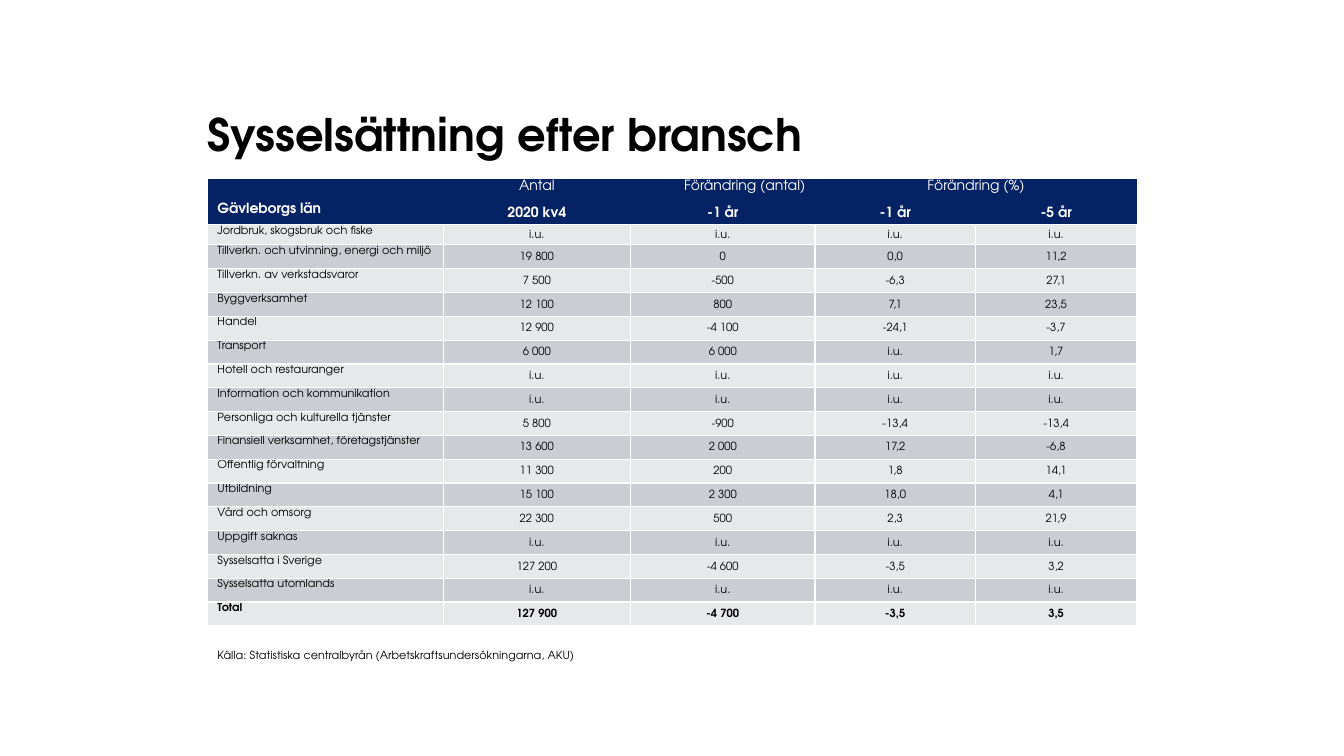
"""Build a slide with a table of employment by industry."""
from dataclasses import dataclass

from lxml import etree
from pptx import Presentation
from pptx.dml.color import RGBColor
from pptx.enum import text as tx
from pptx.oxml import ns
from pptx.util import Cm, Pt

FONT = "TeX Gyre Adventor"
HUES = {"navy": "052364", "light": "E7E8EA", "dark": "CCCDD3",
        "white": "FFFFFF", "black": "000000"}
LEFT, WIDTH = 5.23, 23.42
COLS = [5.94, 4.72, 4.65, 4.04, 4.07]
MID = tx.PP_ALIGN.CENTER


@dataclass
class Style:
    """Look of a piece of text."""
    size: float
    hue: str = "black"
    bold: bool = False


@dataclass
class Row:
    """One table row with its look."""
    cells: list[str]
    fill: str
    style: Style
    high: float
    head: bool = False


DATA = [
    ["Jordbruk, skogsbruk och fiske", "i.u.", "i.u.", "i.u.", "i.u."],
    ["Tillverkn. och utvinning, energi och miljö", "19 800", "0", "0,0", "11,2"],
    ["Tillverkn. av verkstadsvaror", "7 500", "-500", "-6,3", "27,1"],
    ["Byggverksamhet", "12 100", "800", "7,1", "23,5"],
    ["Handel", "12 900", "-4 100", "-24,1", "-3,7"],
    ["Transport", "6 000", "6 000", "i.u.", "1,7"],
    ["Hotell och restauranger", "i.u.", "i.u.", "i.u.", "i.u."],
    ["Information och kommunikation", "i.u.", "i.u.", "i.u.", "i.u."],
    ["Personliga och kulturella tjänster", "5 800", "-900", "-13,4", "-13,4"],
    ["Finansiell verksamhet, företagstjänster", "13 600", "2 000", "17,2", "-6,8"],
    ["Offentlig förvaltning", "11 300", "200", "1,8", "14,1"],
    ["Utbildning", "15 100", "2 300", "18,0", "4,1"],
    ["Vård och omsorg", "22 300", "500", "2,3", "21,9"],
    ["Uppgift saknas", "i.u.", "i.u.", "i.u.", "i.u."],
    ["Sysselsatta i Sverige", "127 200", "-4 600", "-3,5", "3,2"],
    ["Sysselsatta utomlands", "i.u.", "i.u.", "i.u.", "i.u."],
    ["Total", "127 900", "-4 700", "-3,5", "3,5"],
]


def make_rows() -> list[Row]:
    """Join the header rows and the banded data rows."""
    rows = [
        Row(["", "Antal", "Förändring (antal)", "Förändring (%)", ""],
            "navy", Style(10, "white"), 0.58, True),
        Row(["Gävleborgs län", "2020 kv4", "-1 år", "-1 år", "-5 år"],
            "navy", Style(10, "white", True), 0.58, True),
    ]
    for i, cells in enumerate(DATA):
        style = Style(8, bold=cells[0] == "Total")
        fill = "dark" if i % 2 else "light"
        rows.append(Row(cells, fill, style, 0.6 if i else 0.51))
    return rows


def write(frame, words: str, style: Style, align=tx.PP_ALIGN.LEFT) -> None:
    """Put styled words into a text frame."""
    frame.text = words
    para = frame.paragraphs[0]
    para.alignment = align
    for run in para.runs:
        run.font.name = FONT
        run.font.size = Pt(style.size)
        run.font.bold = style.bold
        run.font.color.rgb = RGBColor.from_string(HUES[style.hue])
    if not words:
        end = etree.SubElement(para._p, ns.qn("a:endParaRPr"))
        end.set("sz", str(int(style.size * 100)))


def edge(cell, sides: str, hue: str | None) -> None:
    """Draw or clear the border on the given sides."""
    props = cell._tc.get_or_add_tcPr()
    for side in sides:
        line = etree.SubElement(props, ns.qn(f"a:ln{side}"), w=str(Pt(1)))
        if hue:
            fill = etree.SubElement(line, ns.qn("a:solidFill"))
            etree.SubElement(fill, ns.qn("a:srgbClr"), val=HUES[hue])
        else:
            etree.SubElement(line, ns.qn("a:noFill"))


def pad(cell, first: bool) -> None:
    """Set the cell margins."""
    cell.margin_left = cell.margin_right = Cm(0.25 if first else 0.03)
    cell.margin_top = Cm(0.03)
    cell.margin_bottom = 0


def add_grid(slide) -> None:
    """Add the table of industries."""
    rows = make_rows()
    high = sum(row.high for row in rows)
    grid = slide.shapes.add_table(len(rows), len(COLS), Cm(LEFT), Cm(4.5),
                                  Cm(WIDTH), Cm(high)).table
    grid.first_row = grid.horz_banding = False
    for col, wide in zip(grid.columns, COLS):
        col.width = Cm(wide)
    for r, row in enumerate(rows):
        grid.rows[r].height = Cm(row.high)
        for c, words in enumerate(row.cells):
            cell = grid.cell(r, c)
            write(cell.text_frame, words, row.style,
                  MID if c else tx.PP_ALIGN.LEFT)
            pad(cell, c == 0)
            if c and r:
                cell.vertical_anchor = tx.MSO_ANCHOR.MIDDLE
            if row.head:
                edge(cell, "LRTB", None)
            else:
                edge(cell, "LRB" if r == 2 else "LRTB", "white")
            cell.fill.solid()
            cell.fill.fore_color.rgb = RGBColor.from_string(HUES[row.fill])
    grid.cell(0, 3).merge(grid.cell(0, 4))
    last = grid.cell(0, 2)
    last.margin_right = Cm(0.25)
    last.text_frame.paragraphs[0].alignment = tx.PP_ALIGN.RIGHT


def main() -> None:
    """Build and save the slide."""
    deck = Presentation()
    deck.slide_width, deck.slide_height = Cm(33.87), Cm(19.05)
    slide = deck.slides.add_slide(deck.slide_layouts[5])

    title = slide.shapes.title
    title.left, title.top = Cm(LEFT), Cm(0.94)
    title.width, title.height = Cm(WIDTH), Cm(3.1)
    frame = title.text_frame
    write(frame, "Sysselsättning efter bransch", Style(32, bold=True))
    frame.vertical_anchor = tx.MSO_ANCHOR.BOTTOM
    frame.margin_left = frame.margin_right = 0
    frame.margin_top = frame.margin_bottom = 0

    add_grid(slide)

    note = slide.shapes.add_textbox(Cm(LEFT), Cm(16.21), Cm(9.65), Cm(0.6))
    write(note.text_frame, "Källa: Statistiska centralbyrån "
          "(Arbetskraftsundersökningarna, AKU)", Style(8))
    note.text_frame.word_wrap = False
    note.text_frame.auto_size = tx.MSO_AUTO_SIZE.SHAPE_TO_FIT_TEXT
    deck.save("out.pptx")


if __name__ == "__main__":
    main()
